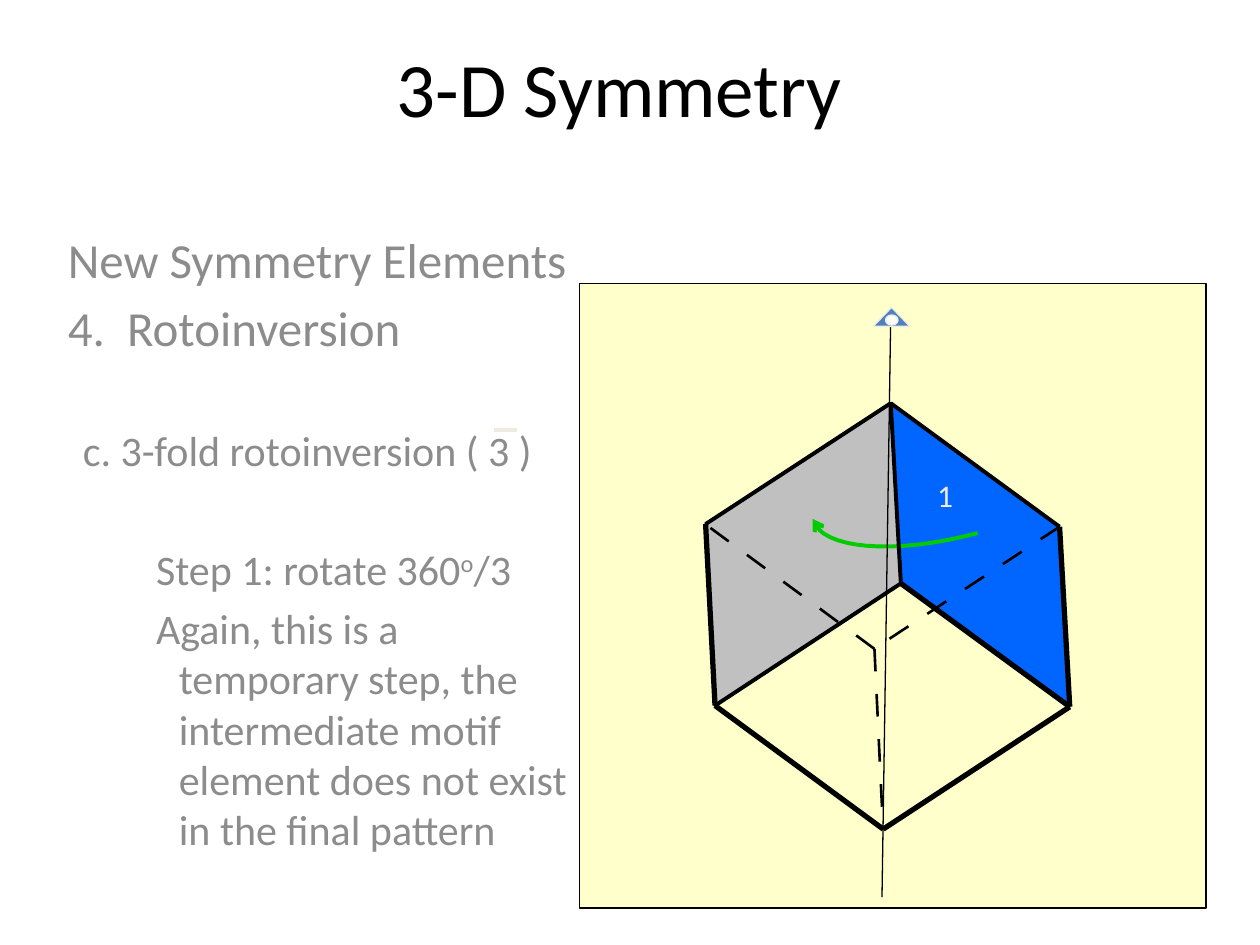
from lxml.etree import SubElement
from pptx import Presentation
from pptx.dml.color import RGBColor
from pptx.enum.shapes import MSO_CONNECTOR as Connector, MSO_SHAPE as Shape
from pptx.enum.text import MSO_ANCHOR as Anchor, MSO_AUTO_SIZE as AutoSize, PP_ALIGN as Align
from pptx.oxml.ns import qn
from pptx.util import Pt

BLACK = RGBColor(0x00, 0x00, 0x00)
WHITE = RGBColor(0xFF, 0xFF, 0xFF)
GRAY = RGBColor(0x8C, 0x8C, 0x8C)
SILVER = RGBColor(0xC0, 0xC0, 0xC0)
CREAM = RGBColor(0xFF, 0xFF, 0xCC)
IVORY = RGBColor(0xEE, 0xEC, 0xE1)
BLUE = RGBColor(0x00, 0x66, 0xFF)
STEEL = RGBColor(0x4F, 0x81, 0xBD)
GREEN = RGBColor(0x00, 0xCC, 0x00)
FONT = "Calibri"

# Text: (runs, size, left margin, first-line indent, space before)
TITLE = "3-D Symmetry"
BODY = [
    (["New Symmetry Elements"], 28, 0, 0, 5.6),
    (["4.  Rotoinversion"], 28, 0, 0, 5.6),
    (["c. 3-fold rotoinversion ( 3 )"], 24, 41, -32.4, 39),
    (["Step 1: rotate 360", "o", "/3"], 24, 63.4, -13, 39),
    (["Again, this is a temporary step, the intermediate motif element "
      "does not exist in the final pattern"], 24, 63.4, -13, 4.8),
]
SUPERSCRIPTS = {"o"}

# Cube corners, in points
CORNERS = {
    "top": (509, 230.4), "front": (514.8, 333.4),
    "upper right": (605.5, 301), "lower right": (611.3, 403.9),
    "upper left": (403.2, 299.5), "lower left": (408.6, 403.2),
    "bottom": (504.7, 473.8), "back": (499.7, 370.8),
}
RIGHT_FACE = ["upper right", "lower right", "front", "top"]
LEFT_FACE = ["top", "front", "lower left", "upper left"]
EDGES = [
    ("upper right", "lower right", 3), ("upper right", "top", 2.25),
    ("lower right", "front", 3), ("lower right", "bottom", 3),
    ("top", "front", 2.25), ("top", "upper left", 2.25),
    ("front", "lower left", 2.25), ("bottom", "lower left", 3),
    ("upper left", "lower left", 3),
]
# Hidden edges: start corner, end of the last dash, number of dashes
HIDDEN_EDGES = [
    ("upper right", (508.3, 365), 5),
    ("back", (504, 461), 4),
    ("back", (406, 301.7), 5),
]
ROTATION_CURVE = [(558.7, 304.6), (511.2, 317.5), (468.7, 313.9), (464.4, 296.6)]
CURVE_STEPS = 16

deck = Presentation()
deck.slide_width, deck.slide_height = Pt(720), Pt(540)
page = deck.slides.add_slide(deck.slide_layouts[6])


def paint(shape, fill=None, line=None, width=0.75):
    shape.shadow.inherit = False
    if fill is None:
        shape.fill.background()
    else:
        shape.fill.solid()
        shape.fill.fore_color.rgb = fill
    if line is None:
        shape.line.fill.background()
    else:
        shape.line.color.rgb = line
        shape.line.width = Pt(width)
    return shape


def add_preset(kind, left, top, width, height, fill, line):
    shape = page.shapes.add_shape(kind, Pt(left), Pt(top), Pt(width), Pt(height))
    return paint(shape, fill, line)


def add_outline(points, close, **style):
    points = [(Pt(x), Pt(y)) for x, y in points]
    builder = page.shapes.build_freeform(*points[0], scale=1.0)
    builder.add_line_segments(points[1:], close=close)
    return paint(builder.convert_to_shape(), **style)


def add_line(start, end, color=BLACK, width=0.75):
    line = page.shapes.add_connector(
        Connector.STRAIGHT, *(Pt(value) for value in (*start, *end)))
    line.line.color.rgb = color
    line.line.width = Pt(width)
    SubElement(line._element.spPr, qn("a:effectLst"))


def add_box(left, top, width, height, wrap=True):
    box = page.shapes.add_textbox(Pt(left), Pt(top), Pt(width), Pt(height))
    box.text_frame.word_wrap = wrap
    return box.text_frame


def add_span(para, text, size, color):
    span = para.add_run()
    span.text = text
    span.font.name, span.font.size = FONT, Pt(size)
    span.font.color.rgb = color
    return span


def between(start, end, part):
    return tuple(a + (b - a) * part for a, b in zip(start, end))


def curve_point(points, part):
    while len(points) > 1:
        points = [between(a, b, part) for a, b in zip(points, points[1:])]
    return points[0]


# Diagram panel
add_preset(Shape.RECTANGLE, 331.2, 162, 358, 357, CREAM, BLACK)

# Title
frame = add_box(48, 0, 612, 98.6)
frame.vertical_anchor = Anchor.MIDDLE
frame.paragraphs[0].alignment = Align.CENTER
add_span(frame.paragraphs[0], TITLE, 44, BLACK)

# Body text
frame = add_box(31.7, 127.4, 311, 323.3)
for index, (texts, size, margin, indent, space) in enumerate(BODY):
    para = frame.add_paragraph() if index else frame.paragraphs[0]
    para.space_before = Pt(space)
    properties = para._p.get_or_add_pPr()
    properties.set("marL", str(Pt(margin)))
    properties.set("indent", str(Pt(indent)))
    for text in texts:
        span = add_span(para, text, size, GRAY)
        if text in SUPERSCRIPTS:
            span._r.get_or_add_rPr().set("baseline", "30000")

# Cube faces
left_face = [CORNERS[name] for name in LEFT_FACE]
add_outline([CORNERS[name] for name in RIGHT_FACE], True, fill=BLUE)
add_outline(left_face, True, fill=SILVER)

# Rotation arrow
curve = [curve_point(ROTATION_CURVE, step / CURVE_STEPS)
         for step in range(CURVE_STEPS + 1)]
arrow = add_outline(curve, False, line=GREEN, width=2.25)
SubElement(arrow.line._get_or_add_ln(), qn("a:tailEnd"), type="arrow")

# Rotation axis, face number and three-fold symbol
add_line((509, 180.7), (504, 512.6))
frame = add_box(528.5, 268.6, 26.6, 36, wrap=False)
frame.auto_size = AutoSize.SHAPE_TO_FIT_TEXT
add_span(frame.paragraphs[0], "1", 18, IVORY)
add_preset(Shape.ISOSCELES_TRIANGLE, 499, 175.7, 20.9, 10.8, STEEL, IVORY)
add_preset(Shape.OVAL, 506, 180, 7.2, 5.8, WHITE, IVORY)

# Cube edges: hidden ones dashed, visible ones solid
add_outline(left_face, True, line=BLACK, width=1.5)
for name, end, count in HIDDEN_EDGES:
    parts = 2 * count - 1
    for part in range(0, parts, 2):
        add_line(between(CORNERS[name], end, part / parts),
                 between(CORNERS[name], end, (part + 1) / parts), width=1.5)
for first, second, width in EDGES:
    add_line(CORNERS[first], CORNERS[second], width=width)

# Bar above the 3
add_line((282.2, 245.5), (295.2, 245.5), IVORY, 2.25)

deck.save("out.pptx")
